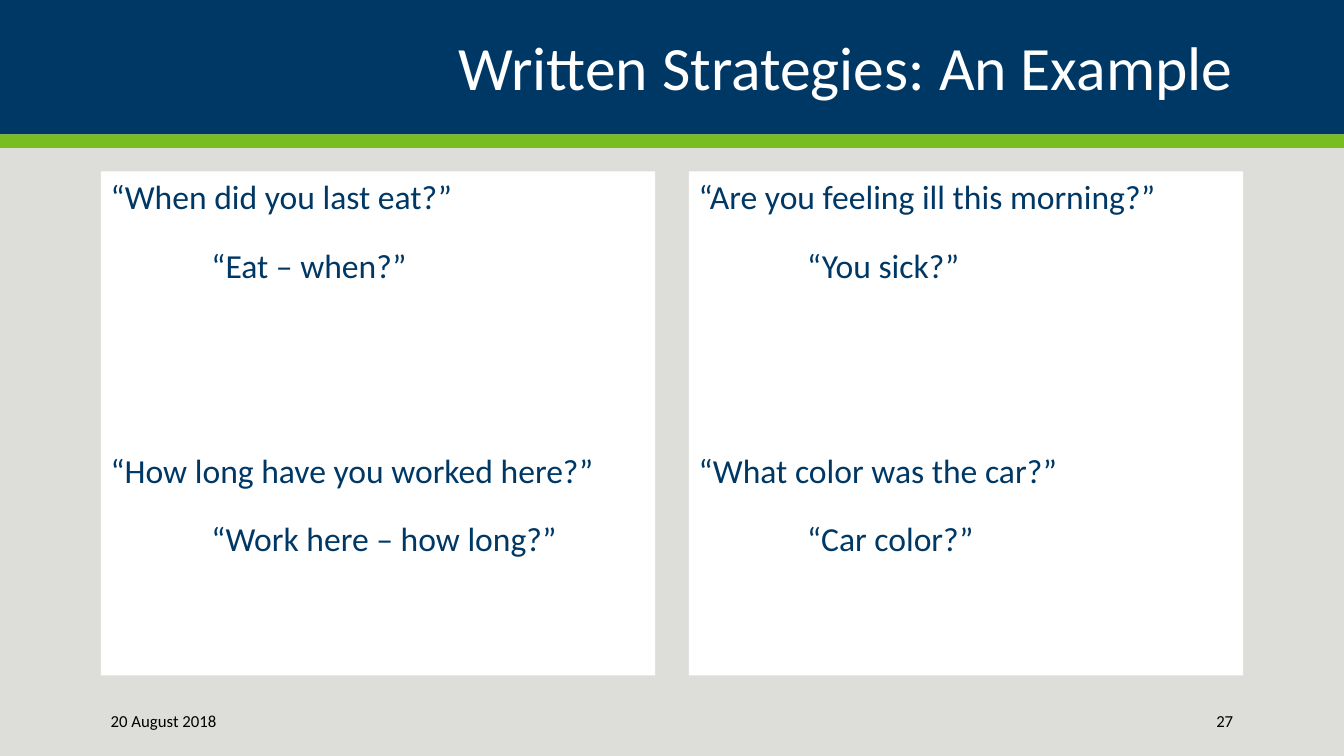
from pptx import Presentation
from pptx.dml.color import RGBColor
from pptx.enum import shapes, text
from pptx.util import Pt

TITLE = "Written Strategies: An Example"
DATE = "20 August 2018"
NUMBER = "27"
PANELS = [
    {"indent": 72, "pairs": [
        ("“When did you last eat?”", "“Eat – when?”"),
        ("“How long have you worked here?”", "“Work here – how long?”"),
    ]},
    {"indent": 77.4, "pairs": [
        ("“Are you feeling ill this morning?”", "“You sick?”"),
        ("“What color was the car?”", "“Car color?”"),
    ]},
]
THEME = {
    "font": "Calibri",
    "navy": "003865", "green": "78BE21", "white": "FFFFFF",
    "black": "000000", "ground": "DDDDDA",
    "title": 44, "body": 24, "footer": 12,
}
WIDTH, HEIGHT = 960, 540
MARGIN = 72
BAND, STRIPE = 96, 9.6
PANEL_TOP, PANEL_WIDTH, PANEL_HEIGHT = 122.4, 396, 360
FOOTER_TOP, FOOTER_WIDTH, FOOTER_HEIGHT = 500.4, 108, 28.8
SPACE, GROUP_GAP = 10, 107.5


def color(name):
    return RGBColor.from_string(THEME[name])


def add_rect(page, left, top, width, height, fill):
    rect = page.shapes.add_shape(shapes.MSO_SHAPE.RECTANGLE,
                                 Pt(left), Pt(top), Pt(width), Pt(height))
    rect.shadow.inherit = False
    rect.fill.solid()
    rect.fill.fore_color.rgb = color(fill)
    rect.line.fill.background()
    return rect


def write(para, words, size="body", ink="navy", align=text.PP_ALIGN.LEFT,
          before=0, after=0, indent=0, leading=1.0):
    para.alignment = align
    para.space_before, para.space_after = Pt(before), Pt(after)
    para.line_spacing = leading
    if indent:
        para._p.get_or_add_pPr().set("marL", str(Pt(indent)))
    span = para.add_run()
    span.text = words
    span.font.name = THEME["font"]
    span.font.size = Pt(THEME[size])
    span.font.color.rgb = color(ink)


def add_label(page, words, left, top, width, height, **style):
    box = page.shapes.add_textbox(Pt(left), Pt(top), Pt(width), Pt(height))
    frame = box.text_frame
    frame.word_wrap = True
    frame.vertical_anchor = text.MSO_ANCHOR.MIDDLE
    write(frame.paragraphs[0], words, **style)


def add_panel(page, left, panel):
    rect = add_rect(page, left, PANEL_TOP, PANEL_WIDTH, PANEL_HEIGHT, "white")
    frame = rect.text_frame
    frame.word_wrap = True
    frame.vertical_anchor = text.MSO_ANCHOR.TOP
    for index, (question, answer) in enumerate(panel["pairs"]):
        para = frame.add_paragraph() if index else frame.paragraphs[0]
        write(para, question, before=GROUP_GAP if index else SPACE, after=SPACE)
        write(frame.add_paragraph(), answer, before=SPACE, after=SPACE,
              indent=panel["indent"])


def main():
    deck = Presentation()
    deck.slide_width, deck.slide_height = Pt(WIDTH), Pt(HEIGHT)
    page = deck.slides.add_slide(deck.slide_layouts[6])
    page.background.fill.solid()
    page.background.fill.fore_color.rgb = color("ground")

    add_rect(page, 0, 0, WIDTH, BAND, "navy")
    add_rect(page, 0, BAND, WIDTH, STRIPE, "green")
    add_label(page, TITLE, MARGIN, 14.4, WIDTH - 2 * MARGIN, 72, size="title",
              ink="white", align=text.PP_ALIGN.RIGHT, leading=0.9)

    step = WIDTH - 2 * MARGIN - PANEL_WIDTH
    for index, panel in enumerate(PANELS):
        add_panel(page, MARGIN + index * step, panel)

    for words, left, align in [
        (DATE, MARGIN, text.PP_ALIGN.LEFT),
        (NUMBER, WIDTH - MARGIN - FOOTER_WIDTH, text.PP_ALIGN.RIGHT),
    ]:
        add_label(page, words, left, FOOTER_TOP, FOOTER_WIDTH, FOOTER_HEIGHT,
                  size="footer", ink="black", align=align)
    deck.save("out.pptx")


if __name__ == "__main__":
    main()
